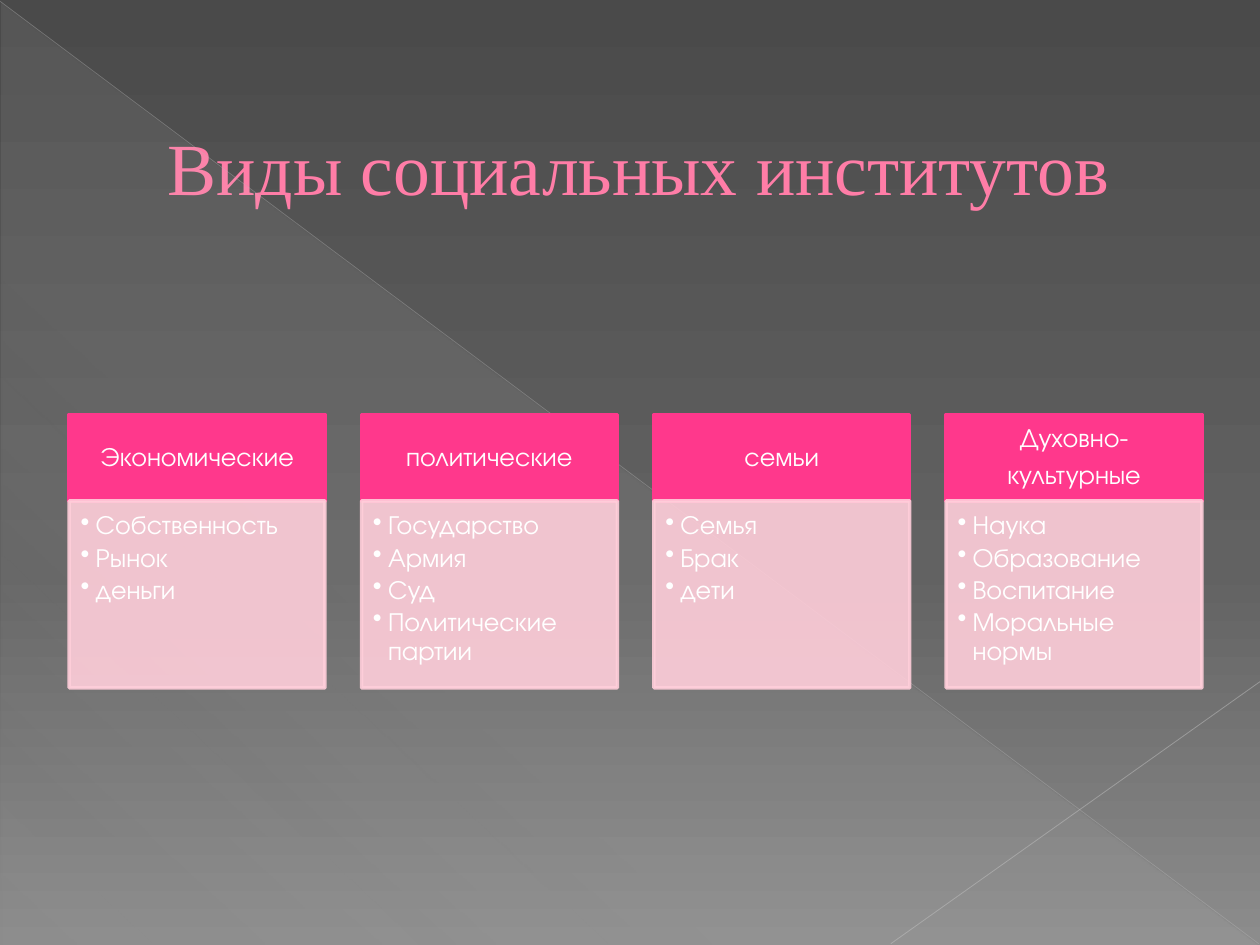
from lxml.etree import SubElement
from pptx import Presentation
from pptx.dml.color import RGBColor
from pptx.enum.shapes import MSO_CONNECTOR as Connector, MSO_SHAPE as Shape
from pptx.enum.text import MSO_ANCHOR as Anchor, MSO_AUTO_SIZE as AutoSize, PP_ALIGN as Align
from pptx.oxml import parse_xml
from pptx.oxml.ns import nsdecls, qn
from pptx.util import Inches, Pt

BODY_FONT = "TeX Gyre Adventor"
PINK, PALE = "FF388C", "FFCEDA"
COLUMNS = [
    (["Экономические"], ["Собственность", "Рынок", "деньги"]),
    (["политические"], ["Государство", "Армия", "Суд", "Политические партии"]),
    (["семьи"], ["Семья", "Брак", "дети"]),
    (["Духовно-", "культурные"], ["Наука", "Образование", "Воспитание", "Моральные нормы"]),
]


def color(value):
    """Turn a hex string into a colour."""
    return RGBColor.from_string(value)


def paint(fill, value, opacity=100):
    """Give a fill one colour and opacity in percent."""
    fill.solid()
    fill.fore_color.rgb = color(value)
    if opacity < 100:
        solid = fill._xPr.find(qn("a:solidFill"))
        SubElement(solid[0], qn("a:alpha"), val=str(opacity * 1000))


def paint_gradient(fill, stops, angle):
    """Give a fill a linear gradient of (position, colour, opacity) stops."""
    fill.solid()
    marks = "".join(
        f'<a:gs pos="{place * 1000}"><a:srgbClr val="{value}">'
        f'<a:alpha val="{opacity * 1000}"/></a:srgbClr></a:gs>'
        for place, value, opacity in stops)
    gradient = parse_xml(
        f'<a:gradFill {nsdecls("a")} rotWithShape="1"><a:gsLst>{marks}</a:gsLst>'
        f'<a:lin ang="{angle * 60000}" scaled="0"/></a:gradFill>')
    solid = fill._xPr.find(qn("a:solidFill"))
    solid.getparent().replace(solid, gradient)


def write(para, text, font=BODY_FONT, size=15, value="FFFFFF", align=Align.LEFT,
          spacing=None, after=0, indent=0, hanging=0, bullet=None):
    """Write one formatted paragraph and return its run."""
    span = para.add_run()
    span.text = text
    span.font.name, span.font.size = font, Pt(size)
    span.font.color.rgb = color(value)
    para.alignment = align
    para.line_spacing, para.space_after = spacing, Pt(after)
    props = para._p.get_or_add_pPr()
    props.set("marL", str(Inches(indent)))
    props.set("indent", str(Inches(-hanging)))
    if bullet:
        SubElement(props, qn("a:buChar"), char=bullet)
    return span


def add_thin_line(page, start, end, value, width, opacity):
    """Draw one translucent straight line."""
    line = page.shapes.add_connector(
        Connector.STRAIGHT, *(Inches(n) for n in (*start, *end)))
    line.line.width = Pt(width)
    paint(line.line.fill, value, opacity)
    SubElement(line._element.spPr, qn("a:effectLst"))


def add_backdrop(page):
    """Paint the grey background with its triangle and crossing lines."""
    paint_gradient(page.background.fill,
                   [(0, "4A4A4A", 100), (60, "626262", 100), (100, "8C8C8C", 100)], 90)
    triangle = page.shapes.add_shape(
        Shape.RIGHT_TRIANGLE, Inches(0.01), Inches(0.02), Inches(9.98), Inches(7.48))
    triangle.shadow.inherit = False
    triangle.line.fill.background()
    paint_gradient(triangle.fill,
                   [(0, "D2D2D2", 10), (70, "D2D2D2", 8), (100, "D2D2D2", 1)], 133)
    add_thin_line(page, (0, 0.01), (9.99, 7.49), "BFBFBF", 0.39, 35)
    add_thin_line(page, (10, 5.41), (7.07, 7.49), "C6C6C6", 0.47, 45)


def add_title(page, left, top, width, height):
    """Place the outlined title."""
    title = page.shapes.title
    title.left, title.top = Inches(left), Inches(top)
    title.width, title.height = Inches(width), Inches(height)
    frame = title.text_frame
    frame.auto_size, frame.vertical_anchor = AutoSize.NONE, Anchor.MIDDLE
    span = write(frame.paragraphs[0], "Виды социальных институтов",
                 font="Times New Roman", size=42, value="FF7DA7", indent=0.53)
    span.font._element.insert(0, parse_xml(
        f'<a:ln {nsdecls("a")} w="{Pt(0.5)}"><a:solidFill>'
        '<a:srgbClr val="B12761"/></a:solidFill></a:ln>'))


def add_panel(page, box, value, opacity, lines, anchor, margins, **style):
    """Draw a filled rectangle holding paragraphs of one style."""
    panel = page.shapes.add_shape(Shape.RECTANGLE, *(Inches(n) for n in box))
    panel.shadow.inherit = False
    paint(panel.fill, value, opacity)
    panel.line.width = Pt(2)
    paint(panel.line.fill, value, opacity)
    frame = panel.text_frame
    frame.word_wrap, frame.vertical_anchor = True, anchor
    (frame.margin_left, frame.margin_top,
     frame.margin_right, frame.margin_bottom) = (Inches(n) for n in margins)
    for index, text in enumerate(lines):
        para = frame.add_paragraph() if index else frame.paragraphs[0]
        write(para, text, spacing=0.9, **style)


def add_column(page, left, top, width, height, heading, items):
    """Stack a heading on its bulleted list."""
    head = 0.685
    add_panel(page, (left, top, width, head), PINK, 100, heading, Anchor.MIDDLE,
              (0.12, 0.07, 0.12, 0.07), align=Align.CENTER, after=5.25)
    add_panel(page, (left, top + head, width, height - head), PALE, 90, items, Anchor.TOP,
              (0.09, 0.09, 0.12, 0.13), after=2.25, indent=0.12, hanging=0.12, bullet="•")


def main():
    """Build the slide and save it."""
    deck = Presentation()
    deck.slide_width, deck.slide_height = Inches(10), Inches(7.5)
    page = deck.slides.add_slide(deck.slide_layouts[5])
    add_backdrop(page)
    add_title(page, 0.7, 0.55, 9, 1.53)
    for index, (heading, items) in enumerate(COLUMNS):
        add_column(page, 0.55 + index * 2.32, 3.29, 2.03, 2.17, heading, items)
    deck.save("out.pptx")


if __name__ == "__main__":
    main()
